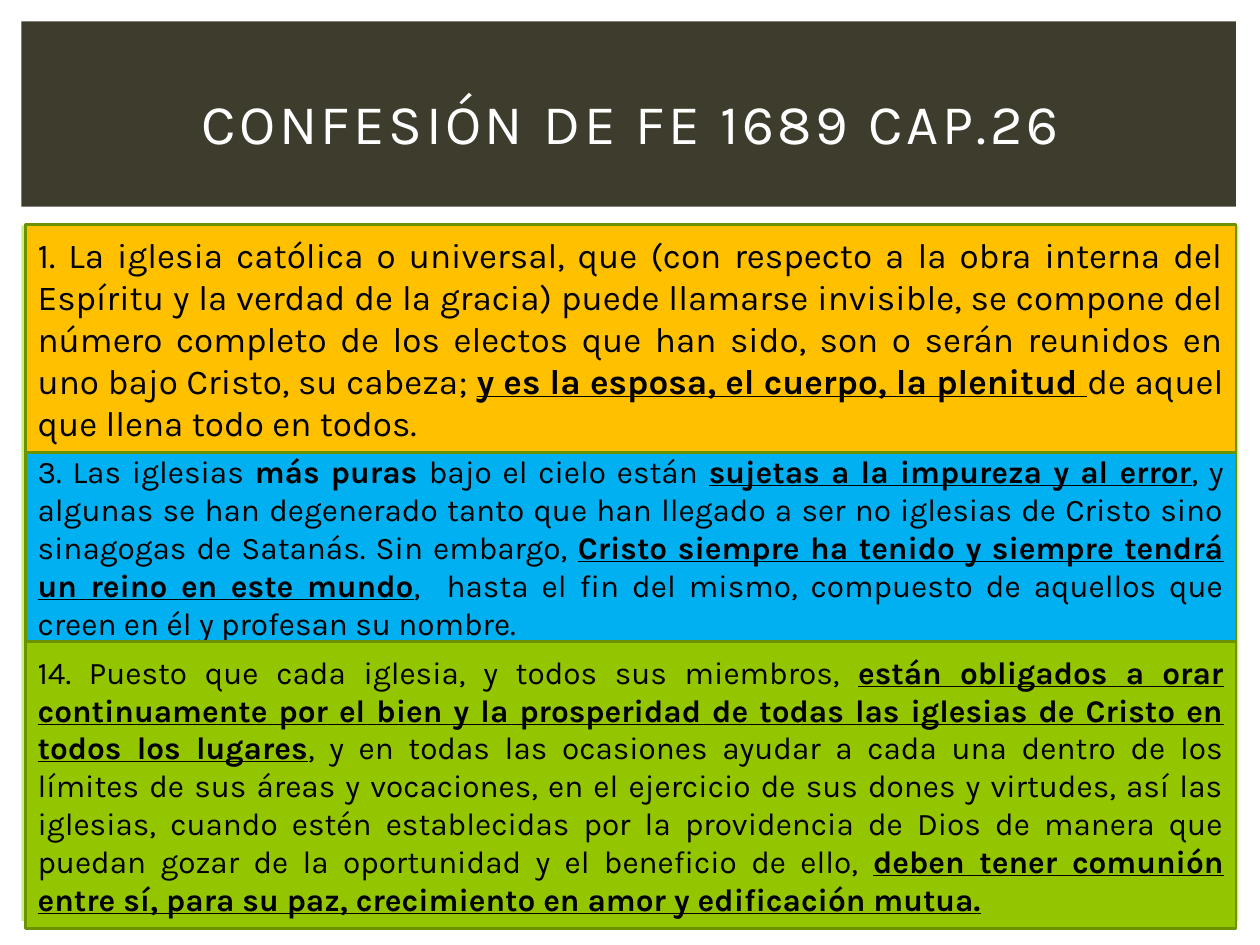
"""Build a slide of three highlighted passages from a confession of faith."""
from dataclasses import dataclass

from pptx import Presentation
from pptx.dml.color import RGBColor
from pptx.enum.shapes import MSO_SHAPE as Shape
from pptx.enum.text import MSO_ANCHOR as Anchor, MSO_AUTO_SIZE as AutoSize, PP_ALIGN as Align
from pptx.util import Inches, Pt

FONT = "Karla"
COLORS = {
    "panel": "CAF278",
    "banner": "3E3D2D",
    "border": "6D9200",
    "amber": "FFC000",
    "blue": "00B0F0",
    "green": "94C600",
    "black": "000000",
    "white": "FFFFFF",
}
PLAIN: dict = {}
BOLD = {"bold": True}
STRESSED = {"bold": True, "underline": True}
BOX_LEFT, BOX_TOP, BOX_WIDTH = 0.2, 1.78, 9.61


@dataclass
class Passage:
    """A coloured box with its height, text size and formatted runs."""
    color: str
    height: float
    size: int
    runs: list[tuple[str, dict]]


PASSAGES = [
    Passage("amber", 1.81, 20, [
        ("1. La iglesia católica o universal, que (con respecto a la obra interna del "
         "Espíritu y la verdad de la gracia) puede llamarse invisible, se compone del "
         "número completo de los electos que han sido, son o serán reunidos en uno bajo "
         "Cristo, su cabeza; ", PLAIN),
        ("y es la esposa, el cuerpo, la plenitud ", STRESSED),
        ("de aquel que llena todo en todos.", PLAIN),
    ]),
    Passage("blue", 1.5, 18, [
        ("3. Las iglesias ", PLAIN),
        ("más puras ", BOLD),
        ("bajo el cielo están ", PLAIN),
        ("sujetas a la impureza y al error", STRESSED),
        (", y algunas se han degenerado tanto que han llegado a ser no iglesias de Cristo "
         "sino sinagogas de Satanás. Sin embargo, ", PLAIN),
        ("Cristo siempre ha tenido y siempre tendrá un reino en este mundo", STRESSED),
        (",  hasta el fin del mismo, compuesto de aquellos que creen en él y profesan "
         "su nombre.", PLAIN),
    ]),
    Passage("green", 2.28, 18, [
        ("14. Puesto que cada iglesia, y todos sus miembros, ", PLAIN),
        ("están obligados a orar continuamente por el bien y la prosperidad de todas las "
         "iglesias de Cristo en todos los lugares", STRESSED),
        (", y en todas las ocasiones ayudar a cada una dentro de los límites de sus áreas "
         "y vocaciones, en el ejercicio de sus dones y virtudes, así las iglesias, cuando "
         "estén establecidas por la providencia de Dios de manera que puedan gozar de la "
         "oportunidad y el beneficio de ello, ", PLAIN),
        ("deben tener comunión entre sí, para su paz, crecimiento en amor y edificación "
         "mutua.", STRESSED),
    ]),
]


def color(name: str) -> RGBColor:
    """Return the named palette colour."""
    return RGBColor.from_string(COLORS[name])


def apply_format(target, values: dict) -> None:
    """Set each attribute of the target from the given values."""
    for name, value in values.items():
        setattr(target, name, value)


def add_rectangle(slide, left: float, top: float, width: float, height: float, fill: str):
    """Add a flat rectangle without an outline."""
    shape = slide.shapes.add_shape(
        Shape.RECTANGLE, Inches(left), Inches(top), Inches(width), Inches(height))
    shape.shadow.inherit = False
    shape.fill.solid()
    shape.fill.fore_color.rgb = color(fill)
    shape.line.fill.background()
    return shape


def add_run(paragraph, text: str, size: int, ink: str, style: dict):
    """Add a run in the slide's font."""
    run = paragraph.add_run()
    run.text = text
    apply_format(run.font, {"name": FONT, "size": Pt(size), **style})
    run.font.color.rgb = color(ink)
    return run


def add_passage(slide, passage: Passage, top: float) -> None:
    """Draw one passage box with justified text."""
    shape = add_rectangle(slide, BOX_LEFT, top, BOX_WIDTH, passage.height, passage.color)
    shape.line.color.rgb = color("border")
    shape.line.width = Pt(1.5)
    apply_format(shape.text_frame, {"word_wrap": True, "vertical_anchor": Anchor.MIDDLE})
    paragraph = shape.text_frame.paragraphs[0]
    paragraph.alignment = Align.JUSTIFY
    for text, style in passage.runs:
        add_run(paragraph, text, passage.size, "black", style)


def add_title(slide, text: str) -> None:
    """Place the title placeholder in front of the banner."""
    title = slide.shapes.title
    apply_format(title, {"left": Inches(0.42), "top": Inches(0.39),
                         "width": Inches(9.17), "height": Inches(1.15)})
    apply_format(title.text_frame, {"word_wrap": True, "auto_size": AutoSize.NONE,
                                    "vertical_anchor": Anchor.MIDDLE})
    paragraph = title.text_frame.paragraphs[0]
    paragraph.alignment = Align.CENTER
    run = add_run(paragraph, text, 32, "white", PLAIN)
    run.font._element.set("spc", "200")
    slide.shapes._spTree.append(title._element)


def main() -> None:
    """Build and save the presentation."""
    presentation = Presentation()
    apply_format(presentation, {"slide_width": Inches(10), "slide_height": Inches(7.5)})
    slide = presentation.slides.add_slide(presentation.slide_layouts[5])
    add_rectangle(slide, 0.17, 1.79, 9.66, 5.52, "panel")
    add_rectangle(slide, 0.17, 0.17, 9.64, 1.47, "banner")
    add_title(slide, "CONFESIÓN DE FE 1689 CAP.26")
    top = BOX_TOP
    for passage in PASSAGES:
        add_passage(slide, passage, top)
        top += passage.height
    presentation.save("out.pptx")


if __name__ == "__main__":
    main()
